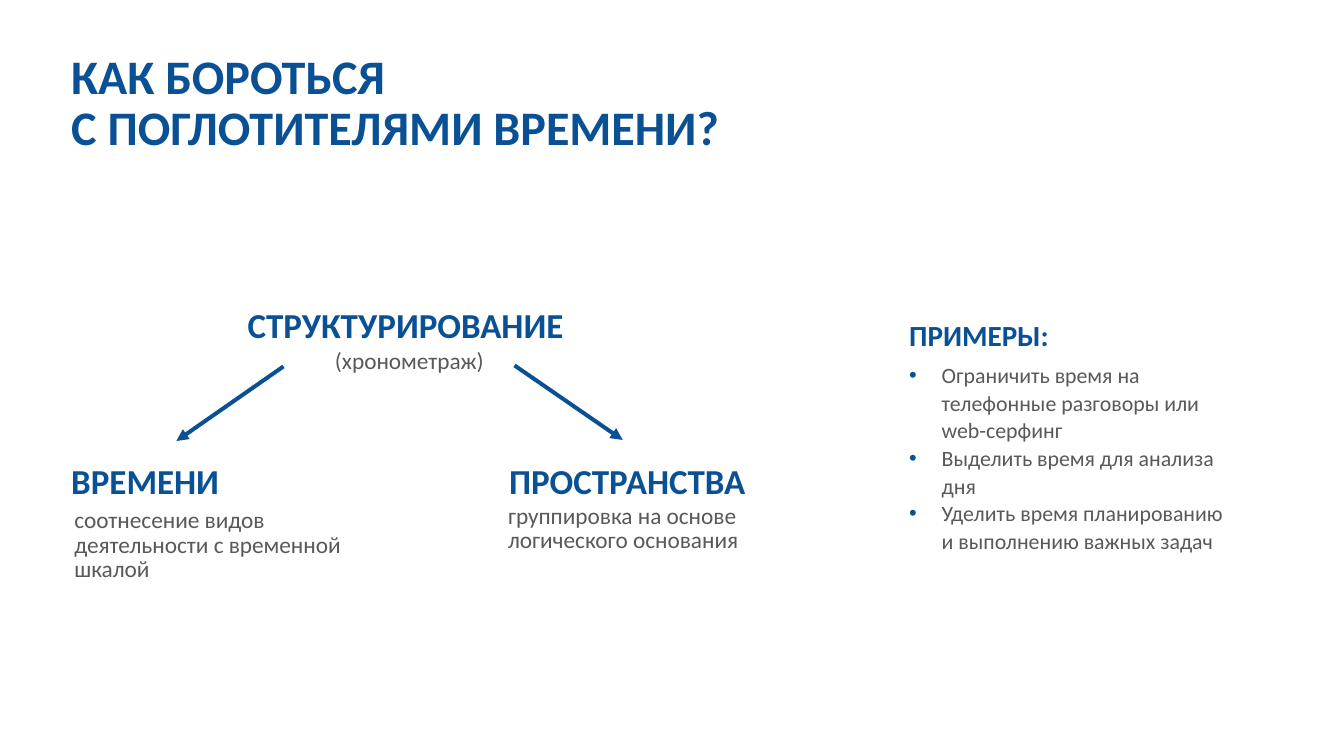
from lxml import etree
from pptx import Presentation
from pptx.dml.color import RGBColor
from pptx.enum.shapes import MSO_CONNECTOR
from pptx.enum.text import MSO_AUTO_SIZE, PP_ALIGN
from pptx.oxml.ns import qn
from pptx.util import Emu, Pt

PX = 9144  # EMU per px, 100 px to the inch
LEFT, CENTER = PP_ALIGN.LEFT, PP_ALIGN.CENTER


class Theme:
    font = "Calibri"
    blue = "0A5095"
    grey = "595959"
    arrow_width = 2.75
    # style: size, line spacing, colour, bold
    title = (33, 35, blue, True)
    heading = (24, 22, blue, True)
    side_heading = (20, 22, blue, True)
    body = (16, 17, grey, False)
    bullets = (15, 19, grey, False)


def px(*lengths):
    return [Emu(length * PX) for length in lengths]


def add_bullet(para):
    """Give the paragraph a blue bullet with a hanging indent."""
    properties = para._p.get_or_add_pPr()
    properties.set("marL", str(31 * PX))
    properties.set("indent", str(-31 * PX))
    color = etree.SubElement(properties, qn("a:buClr"))
    etree.SubElement(color, qn("a:srgbClr")).set("val", Theme.blue)
    etree.SubElement(properties, qn("a:buFont")).set("typeface", "Arial")
    etree.SubElement(properties, qn("a:buChar")).set("char", "•")


deck = Presentation()
deck.slide_width, deck.slide_height = px(1280, 720)
slide = deck.slides.add_slide(deck.slide_layouts[6])

texts = [
    ((58, 46, 787, 108), Theme.title, LEFT,
     ["КАК БОРОТЬСЯ", "С ПОГЛОТИТЕЛЯМИ ВРЕМЕНИ?"]),
    ((856, 300, 378, 41), Theme.side_heading, LEFT, ["ПРИМЕРЫ:"]),
    ((856, 338, 331, 197), Theme.bullets, LEFT,
     ["Ограничить время на телефонные разговоры или web-серфинг",
      "Выделить время для анализа дня",
      "Уделить время планированию и выполнению важных задач"]),
    ((201, 294, 378, 42), Theme.heading, CENTER, ["СТРУКТУРИРОВАНИЕ "]),
    ((305, 328, 170, 34), Theme.body, CENTER, ["(хронометраж)"]),
    ((58, 442, 189, 42), Theme.heading, LEFT, ["ВРЕМЕНИ"]),
    ((61, 479, 276, 82), Theme.body, LEFT,
     ["соотнесение видов деятельности с временной шкалой"]),
    ((475, 442, 334, 42), Theme.heading, LEFT, ["ПРОСТРАНСТВА"]),
    ((474, 475, 276, 58), Theme.body, LEFT,
     ["группировка на основе логического основания"]),
]
for place, style, align, lines in texts:
    size, spacing, color, bold = style
    frame = slide.shapes.add_textbox(*px(*place)).text_frame
    frame.word_wrap = True
    frame.auto_size = MSO_AUTO_SIZE.SHAPE_TO_FIT_TEXT
    frame.text = "\n".join(lines)
    for para in frame.paragraphs:
        para.alignment = align
        para.line_spacing = Pt(spacing)
        if style is Theme.bullets:
            add_bullet(para)
        para.font.name = Theme.font
        para.font.size = Pt(size)
        para.font.bold = bold
        para.font.color.rgb = RGBColor.from_string(color)

for ends in [(270, 349, 168, 420), (490, 348, 593, 419)]:
    arrow = slide.shapes.add_connector(MSO_CONNECTOR.STRAIGHT, *px(*ends))
    arrow.line.width = Pt(Theme.arrow_width)
    arrow.line.color.rgb = RGBColor.from_string(Theme.blue)
    etree.SubElement(arrow.line._get_or_add_ln(), qn("a:tailEnd")).set("type", "triangle")
    etree.SubElement(arrow._element.spPr, qn("a:effectLst"))

deck.save("out.pptx")
